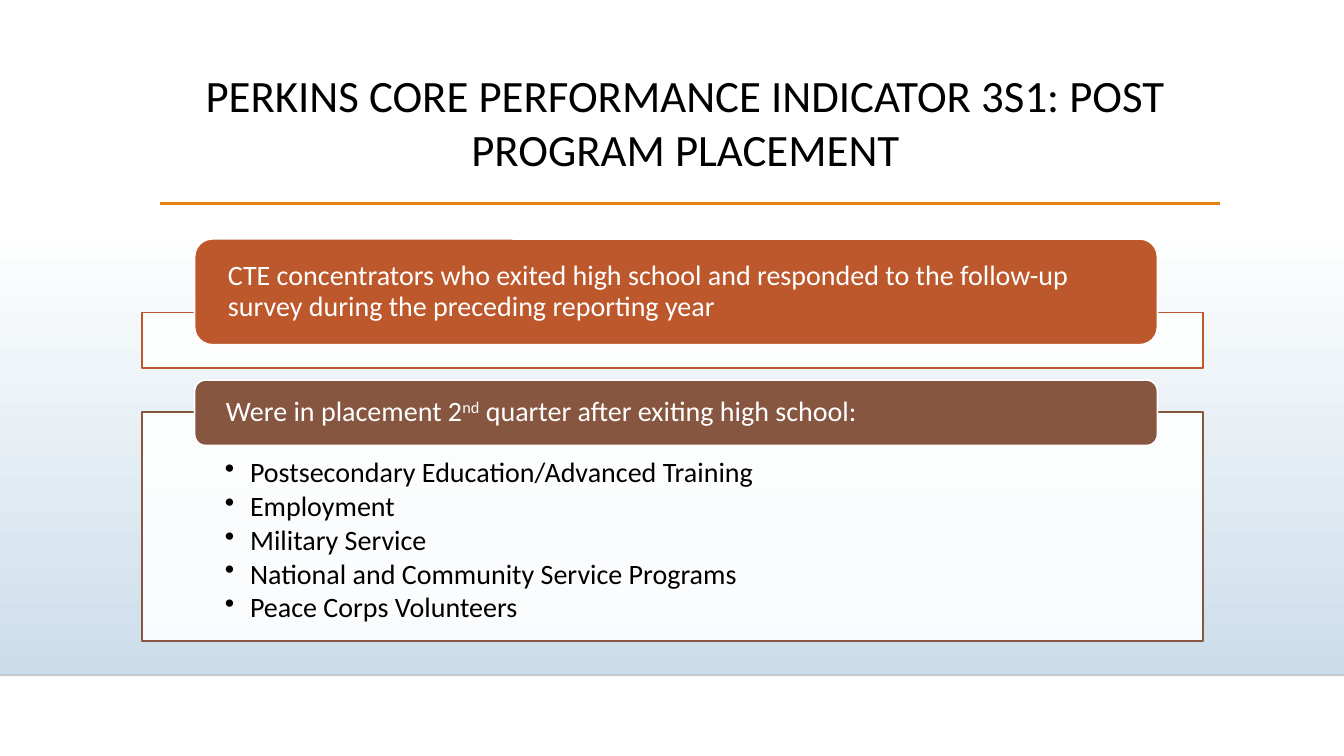
from pptx import Presentation, util as u
from pptx.dml.color import RGBColor
from pptx.enum import shapes, text
from pptx.oxml import parse_xml
from pptx.oxml.ns import qn, nsdecls

# Content
TITLE = "PERKINS CORE PERFORMANCE INDICATOR 3S1: POST PROGRAM PLACEMENT"
# Each block: colour, panel top and height, header top and height, header runs, bullets
BLOCKS = [
    ("rust", 3.1, 0.55, 2.37, 1.05,
     [("CTE concentrators who exited high school and responded to the "
       "follow-up survey during the preceding reporting year", False)], []),
    ("brown", 4.09, 2.27, 3.77, 0.65,
     [("Were in placement 2", False), ("nd", True),
      (" quarter after exiting high school:", False)],
     ["Postsecondary Education/Advanced Training", "Employment",
      "Military Service", "National and Community Service Programs",
      "Peace Corps Volunteers"]),
]
COLORS = {"white": "FFFFFF", "black": "000000", "sky": "CCDDEA",
          "gold": "E48312", "rust": "BD582C", "brown": "865640"}
FONT = "Calibri"

# Layout in inches
WIDE, HIGH = 13.33, 7.5
LEFT, SPAN = 1.41, 10.52
HEAD_LEFT, HEAD_SPAN = 1.93, 9.55
SKY_TOP, SKY_END = 2.21, 6.7


def rgb(name):
    return RGBColor.from_string(COLORS[name])


def fade(fill_xml, share):
    """Set the opacity, in percent, of a solid fill."""
    tone = fill_xml.find(".//" + qn("a:srgbClr"))
    tone.append(parse_xml(f'<a:alpha {nsdecls("a")} val="{share * 1000}"/>'))


def style(font, size, color):
    font.name, font.size, font.color.rgb = FONT, u.Pt(size), rgb(color)


def inset(frame, left, top, right, low):
    frame.word_wrap = True
    frame.margin_left, frame.margin_top = u.Inches(left), u.Inches(top)
    frame.margin_right, frame.margin_bottom = u.Inches(right), u.Inches(low)


def add_box(kind, left, top, width, height):
    box = slide.shapes.add_shape(kind, *map(u.Inches, (left, top, width, height)))
    box.shadow.inherit = False
    return box


def add_rule(left, right, y, color, points):
    rule = slide.shapes.add_connector(
        shapes.MSO_CONNECTOR.STRAIGHT, *map(u.Inches, (left, y, right, y)))
    rule.line.color.rgb, rule.line.width = rgb(color), u.Pt(points)
    rule._element.spPr.append(parse_xml(f'<a:effectLst {nsdecls("a")}/>'))
    return rule


def add_panel(color, top, height, items):
    panel = add_box(shapes.MSO_SHAPE.RECTANGLE, LEFT, top, SPAN, height)
    panel.fill.solid()
    panel.fill.fore_color.rgb = rgb("white")
    fade(panel._element.spPr.find(qn("a:solidFill")), 90)
    panel.line.color.rgb, panel.line.width = rgb(color), u.Pt(1.25)
    if not items:
        return
    frame = panel.text_frame
    frame.text = "\n".join(items)
    frame.vertical_anchor = text.MSO_ANCHOR.TOP
    inset(frame, 0.82, 0.46, 0.82, 0.16)
    for para in frame.paragraphs:
        props = para._p.get_or_add_pPr()
        props.set("marL", str(u.Inches(0.25)))
        props.set("indent", str(u.Inches(-0.25)))
        props.append(parse_xml(f'<a:buChar {nsdecls("a")} char="•"/>'))
        para.alignment = text.PP_ALIGN.LEFT
        para.line_spacing, para.space_after = 0.9, u.Pt(2.5)
        style(para.runs[0].font, 20, "black")


def add_header(color, top, height, parts):
    head = add_box(shapes.MSO_SHAPE.ROUNDED_RECTANGLE,
                   HEAD_LEFT, top, HEAD_SPAN, height)
    head.fill.solid()
    head.fill.fore_color.rgb = rgb(color)
    head.line.color.rgb, head.line.width = rgb("white"), u.Pt(1.25)
    frame = head.text_frame
    frame.vertical_anchor = text.MSO_ANCHOR.MIDDLE
    inset(frame, 0.28, 0, 0.28, 0)
    para = frame.paragraphs[0]
    para.alignment, para.line_spacing = text.PP_ALIGN.LEFT, 0.9
    for words, raised in parts:
        run = para.add_run()
        run.text = words
        style(run.font, 20, "white")
        if raised:
            run._r.get_or_add_rPr().set("baseline", "30000")


deck = Presentation()
deck.slide_width, deck.slide_height = u.Inches(WIDE), u.Inches(HIGH)
slide = deck.slides.add_slide(deck.slide_layouts[5])

# Backdrop and rules
sky = add_box(shapes.MSO_SHAPE.RECTANGLE, 0, SKY_TOP, WIDE, SKY_END - SKY_TOP)
sky.fill.gradient()
sky.fill.gradient_angle = 270
for stop, name in zip(sky.fill.gradient_stops, ("white", "sky")):
    stop.color.rgb = rgb(name)
sky.line.fill.background()
edge = add_rule(0, WIDE, SKY_END, "black", 1)
fade(edge._element.spPr.find(qn("a:ln")), 20)
add_rule(1.59, 12.1, 2.02, "gold", 2.5)

# Title
title = slide.shapes.title
title.left, title.top = u.Inches(1.54), u.Inches(0.6)
title.width, title.height = u.Inches(SPAN), u.Inches(1.37)
title.text_frame.text = TITLE
title.text_frame.vertical_anchor = text.MSO_ANCHOR.TOP
inset(title.text_frame, 0.1, 0.07, 0.1, 0.05)
title.text_frame.paragraphs[0].alignment = text.PP_ALIGN.CENTER
style(title.text_frame.paragraphs[0].runs[0].font, 32, "black")

# Panels with their headers
for color, top, height, head_top, head_high, parts, items in BLOCKS:
    add_panel(color, top, height, items)
    add_header(color, head_top, head_high, parts)

deck.save("out.pptx")
